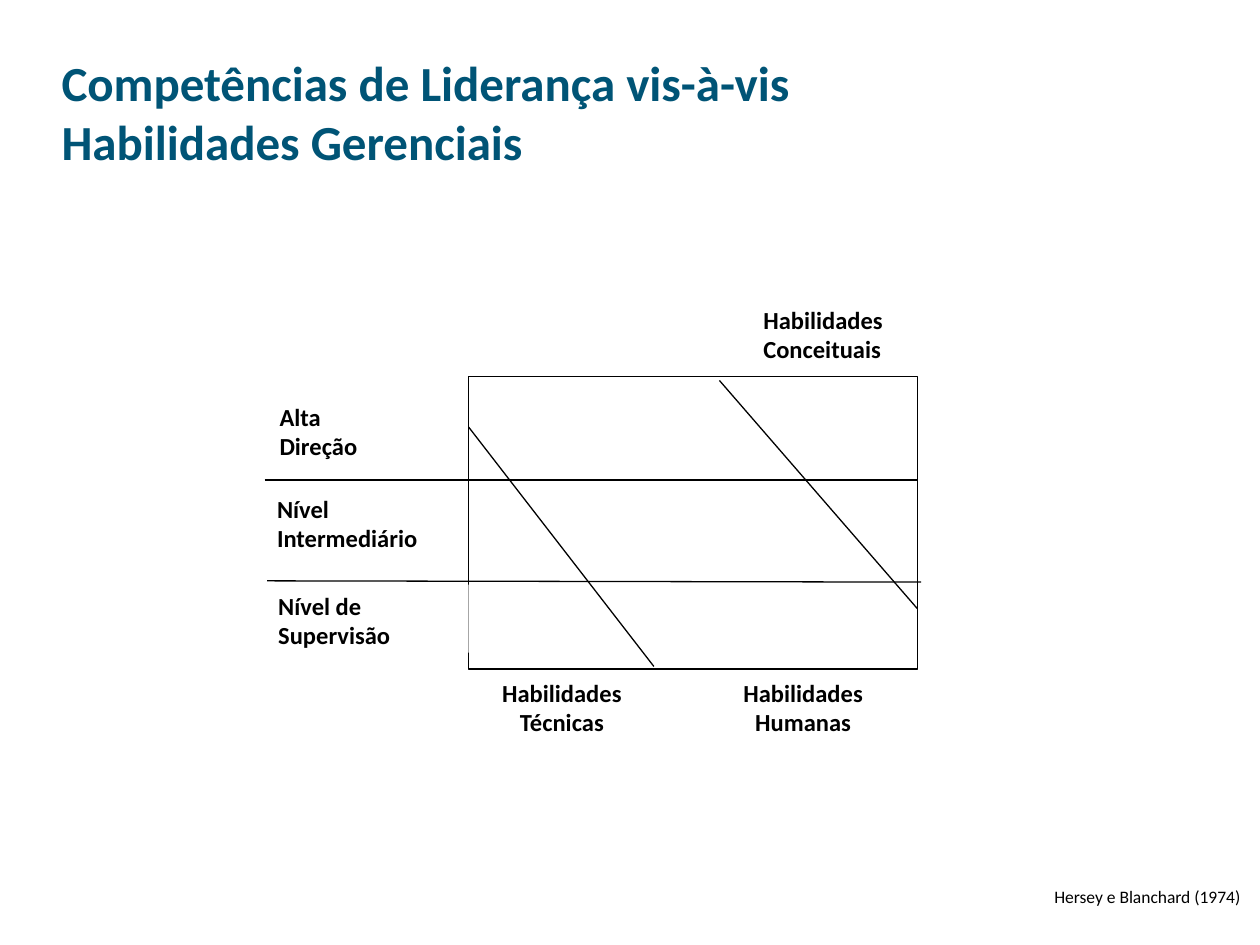
from dataclasses import dataclass

from pptx import Presentation
from pptx.dml.color import RGBColor
from pptx.enum.shapes import MSO_CONNECTOR, MSO_SHAPE
from pptx.enum.text import MSO_ANCHOR, MSO_AUTO_SIZE, PP_ALIGN
from pptx.oxml.ns import qn
from pptx.util import Inches, Pt
from lxml import etree

RECTANGLE = MSO_SHAPE.RECTANGLE
STRAIGHT = MSO_CONNECTOR.STRAIGHT
TOP = MSO_ANCHOR.TOP
FIT_SHAPE = MSO_AUTO_SIZE.SHAPE_TO_FIT_TEXT
LEFT, CENTER = PP_ALIGN.LEFT, PP_ALIGN.CENTER

COLORS = {"title": "005476", "ink": "000000", "paper": "FFFFFF"}
TITLE_FORMAT = {"name": "Calibri", "size": Pt(28), "bold": True}
LABEL_FORMAT = {"name": "Calibri", "size": Pt(14), "bold": True}
SOURCE_FORMAT = {"name": "Calibri", "size": Pt(10), "bold": False}
LINE_WIDTH = Pt(0.75)


@dataclass(frozen=True)
class Box:
    left: float
    top: float
    width: float
    height: float

    def lengths(self) -> list:
        return [Inches(v) for v in (self.left, self.top, self.width, self.height)]


@dataclass(frozen=True)
class Label:
    box: Box
    lines: tuple
    align: PP_ALIGN = LEFT


@dataclass(frozen=True)
class Divider:
    x1: float
    y1: float
    x2: float
    y2: float


MATRIX = Box(3.72, 2.99, 3.56, 2.32)
RIGHT_EDGE = MATRIX.left + MATRIX.width

LABELS = [
    Label(Box(2.1, 3.87, 1.68, 0.64), ("Nível", "Intermediário")),
    Label(Box(5.51, 5.33, 1.73, 0.54), ("Habilidades", "Humanas"), CENTER),
    Label(Box(3.57, 5.33, 1.78, 0.52), ("Habilidades", "Técnicas"), CENTER),
    Label(Box(5.96, 2.37, 1.78, 0.52), ("Habilidades Conceituais",)),
    Label(Box(2.12, 3.14, 1.52, 0.54), ("Alta", "Direção")),
]
SUPERVISION = Label(Box(2.11, 4.64, 1.61, 0.54), ("Nível de", "Supervisão"))

DIVIDERS = [
    Divider(MATRIX.left, 3.39, 5.19, 5.29),
    Divider(5.71, 3.02, RIGHT_EDGE, 4.83),
    Divider(2.1, 3.81, RIGHT_EDGE, 3.81),
    Divider(2.12, 4.61, 7.31, 4.62),
]


def write_text(frame, lines: tuple, formats: dict, color: str, align: PP_ALIGN = LEFT) -> None:
    frame.vertical_anchor = TOP
    for index, line in enumerate(lines):
        paragraph = frame.add_paragraph() if index else frame.paragraphs[0]
        paragraph.alignment = align
        run = paragraph.add_run()
        run.text = line
        for attribute, value in formats.items():
            setattr(run.font, attribute, value)
        run.font.color.rgb = RGBColor.from_string(COLORS[color])


def add_rectangle(slide, box: Box):
    rectangle = slide.shapes.add_shape(RECTANGLE, *box.lengths())
    rectangle.shadow.inherit = False
    rectangle.fill.solid()
    rectangle.fill.fore_color.rgb = RGBColor.from_string(COLORS["paper"])
    return rectangle


def set_line(line) -> None:
    line.color.rgb = RGBColor.from_string(COLORS["ink"])
    line.width = LINE_WIDTH


def add_label(slide, label: Label) -> None:
    rectangle = add_rectangle(slide, label.box)
    rectangle.line.fill.background()
    rectangle.text_frame.word_wrap = True
    write_text(rectangle.text_frame, label.lines, LABEL_FORMAT, "ink", label.align)


def add_divider(slide, divider: Divider) -> None:
    ends = [Inches(v) for v in (divider.x1, divider.y1, divider.x2, divider.y2)]
    connector = slide.shapes.add_connector(STRAIGHT, *ends)
    set_line(connector.line)
    etree.SubElement(connector._element.spPr, qn("a:effectLst"))


def add_text(slide, box: Box, text: str, formats: dict, color: str, wrap: bool) -> None:
    frame = slide.shapes.add_textbox(*box.lengths()).text_frame
    frame.word_wrap = wrap
    frame.auto_size = FIT_SHAPE
    write_text(frame, (text,), formats, color)


def main() -> None:
    presentation = Presentation()
    presentation.slide_width = Inches(10)
    presentation.slide_height = Inches(7.5)
    slide = presentation.slides.add_slide(presentation.slide_layouts[6])

    title = "Competências de Liderança vis-à-vis Habilidades Gerenciais"
    add_text(slide, Box(0.39, 0.37, 7.66, 1.04), title, TITLE_FORMAT, "title", True)
    for label in LABELS:
        add_label(slide, label)
    set_line(add_rectangle(slide, MATRIX).line)
    add_label(slide, SUPERVISION)
    for divider in DIVIDERS:
        add_divider(slide, divider)
    citation = "Hersey e Blanchard (1974)"
    add_text(slide, Box(8.27, 6.98, 1.73, 0.27), citation, SOURCE_FORMAT, "ink", False)

    presentation.save("out.pptx")


if __name__ == "__main__":
    main()
